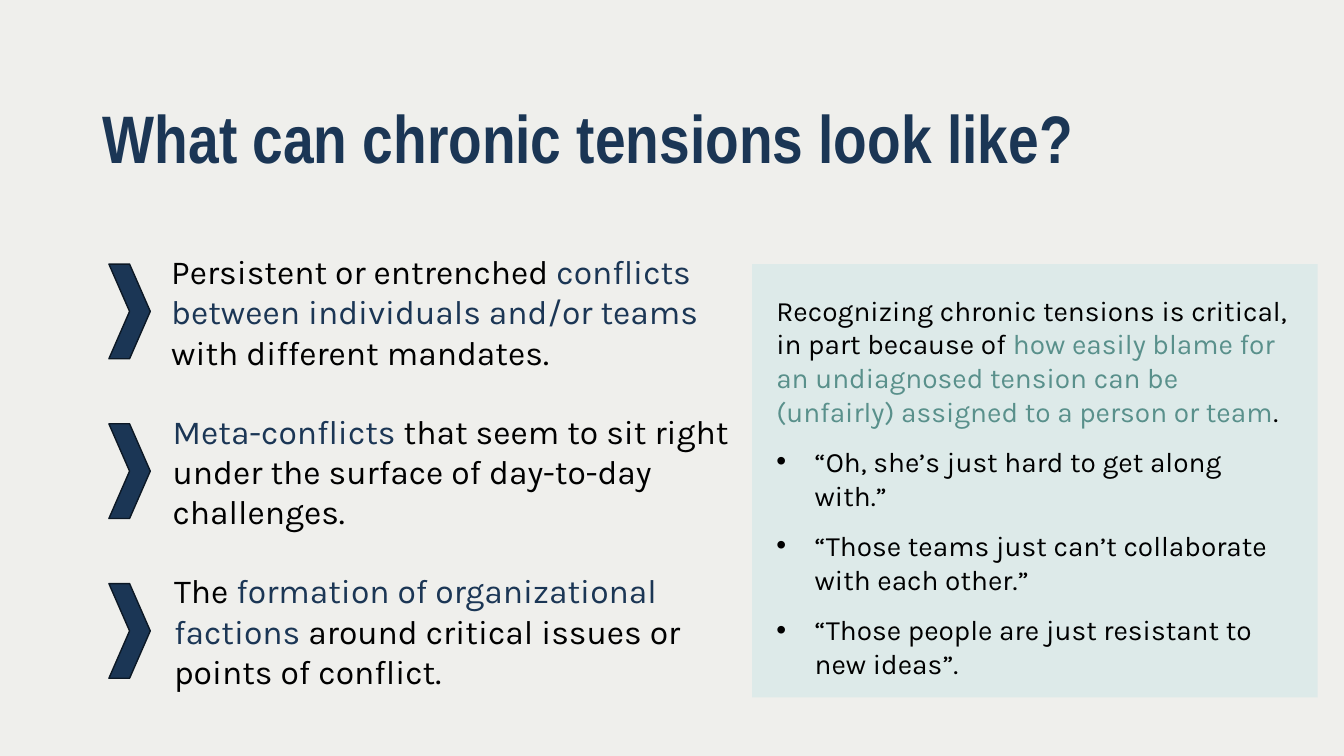
from lxml.etree import SubElement
from pptx import Presentation
from pptx.dml.color import RGBColor
from pptx.enum.shapes import MSO_SHAPE
from pptx.enum.text import MSO_ANCHOR, MSO_AUTO_SIZE, PP_ALIGN
from pptx.oxml.ns import qn
from pptx.util import Inches, Pt

NAVY, EDGE, TEAL = "1B3655", "0C1825", "59908B"
BLACK, MIST, PAPER = "000000", "DDEAE9", "EFEFEC"

POINTS = [
    [("Persistent or entrenched ", BLACK),
     ("conflicts between individuals and/or teams ", NAVY),
     ("with different mandates.", BLACK)],
    [("Meta-conflicts", NAVY),
     (" that seem to sit right under the surface of day-to-day challenges.", BLACK)],
    [("The ", BLACK),
     ("formation of organizational factions ", NAVY),
     ("around critical issues or points of conflict.", BLACK)],
]
INTRO = [
    ("Recognizing chronic tensions is critical, in part because of ", BLACK),
    ("how easily blame for an undiagnosed tension can be (unfairly) "
     "assigned to a person or team", TEAL),
    (".", BLACK),
]
QUOTES = [
    "“Oh, she’s just hard to get along with.”",
    "“Those teams just can’t collaborate with each other.”",
    "“Those people are just resistant to new ideas”.",
]


def tint(code):
    return RGBColor.from_string(code)


def write(para, runs, size=24, font="Karla", bold=False, before=0, bullet=False):
    """Fill a paragraph with (text, colour) runs; a bullet hangs by 0.38 inch."""
    para.alignment = PP_ALIGN.LEFT
    para.space_before = Pt(before)
    for text, code in runs:
        run = para.add_run()
        run.text = text
        run.font.size, run.font.name, run.font.bold = Pt(size), font, bold
        run.font.color.rgb = tint(code)
    props = para._p.get_or_add_pPr()
    hang = Inches(0.38) if bullet else 0
    props.set("marL", str(hang))
    props.set("indent", str(-hang))
    if bullet:
        SubElement(props, qn("a:buFont"), typeface="Arial")
        SubElement(props, qn("a:buChar"), char="•")
    else:
        SubElement(props, qn("a:buNone"))


class Deck:
    def __init__(self):
        self.prs = Presentation()
        self.prs.slide_width, self.prs.slide_height = Inches(13.33), Inches(7.5)
        self.slide = self.prs.slides.add_slide(self.prs.slide_layouts[1])
        fill = self.slide.background.fill
        fill.solid()
        fill.fore_color.rgb = tint(PAPER)

    def area(self, left, top, width, height):
        """Turn percentages of the slide's size into lengths."""
        wide, high = self.prs.slide_width, self.prs.slide_height
        return [int(share * side / 100) for share, side in
                zip((left, top, width, height), (wide, high, wide, high))]

    def move(self, holder, area):
        holder.left, holder.top, holder.width, holder.height = self.area(*area)

    def title(self, text, area):
        holder = self.slide.shapes.title
        self.move(holder, area)
        frame = holder.text_frame
        frame.auto_size = MSO_AUTO_SIZE.NONE
        frame.vertical_anchor = MSO_ANCHOR.MIDDLE
        write(frame.paragraphs[0], [(text, NAVY)], size=48,
              font="Arial Narrow", bold=True, before=10)

    def shape(self, kind, area, fill, line=None):
        item = self.slide.shapes.add_shape(kind, *self.area(*area))
        item.shadow.inherit = False
        item.fill.solid()
        item.fill.fore_color.rgb = tint(fill)
        if line:
            item.line.color.rgb = tint(line)
            item.line.width = Pt(1)
        else:
            item.line.fill.background()
        return item

    def text(self, runs, area):
        frame = self.slide.shapes.add_textbox(*self.area(*area)).text_frame
        frame.word_wrap = True
        frame.auto_size = MSO_AUTO_SIZE.SHAPE_TO_FIT_TEXT
        write(frame.paragraphs[0], runs)

    def list(self, intro, items, area, panel):
        """Write an intro and its bullets in the body, in front of the panel."""
        body = self.slide.placeholders[1]
        self.move(body, area)
        panel.element.addnext(body.element)
        frame = body.text_frame
        frame.auto_size = MSO_AUTO_SIZE.SHAPE_TO_FIT_TEXT
        write(frame.paragraphs[0], intro, size=20, before=12)
        for item in items:
            write(frame.add_paragraph(), [(item, BLACK)],
                  size=20, before=12, bullet=True)


def main():
    deck = Deck()
    deck.title("What can chronic tensions look like?", (6.9, 10.8, 86.27, 14.53))
    for row, runs in enumerate(POINTS):
        drop = row * 21.13
        deck.text(runs, (12 + row * 0.11, 32.53 + drop, 43.74, 17.47))
        deck.shape(MSO_SHAPE.CHEVRON, (8.1, 34.93 + drop, 3.08, 12.53), NAVY, EDGE)
    panel = deck.shape(MSO_SHAPE.RECTANGLE, (55.96, 34.93, 42.08, 57.33), MIST)
    deck.list(INTRO, QUOTES, (57.01, 38.13, 39.76, 48.53), panel)
    deck.prs.save("out.pptx")


if __name__ == "__main__":
    main()
